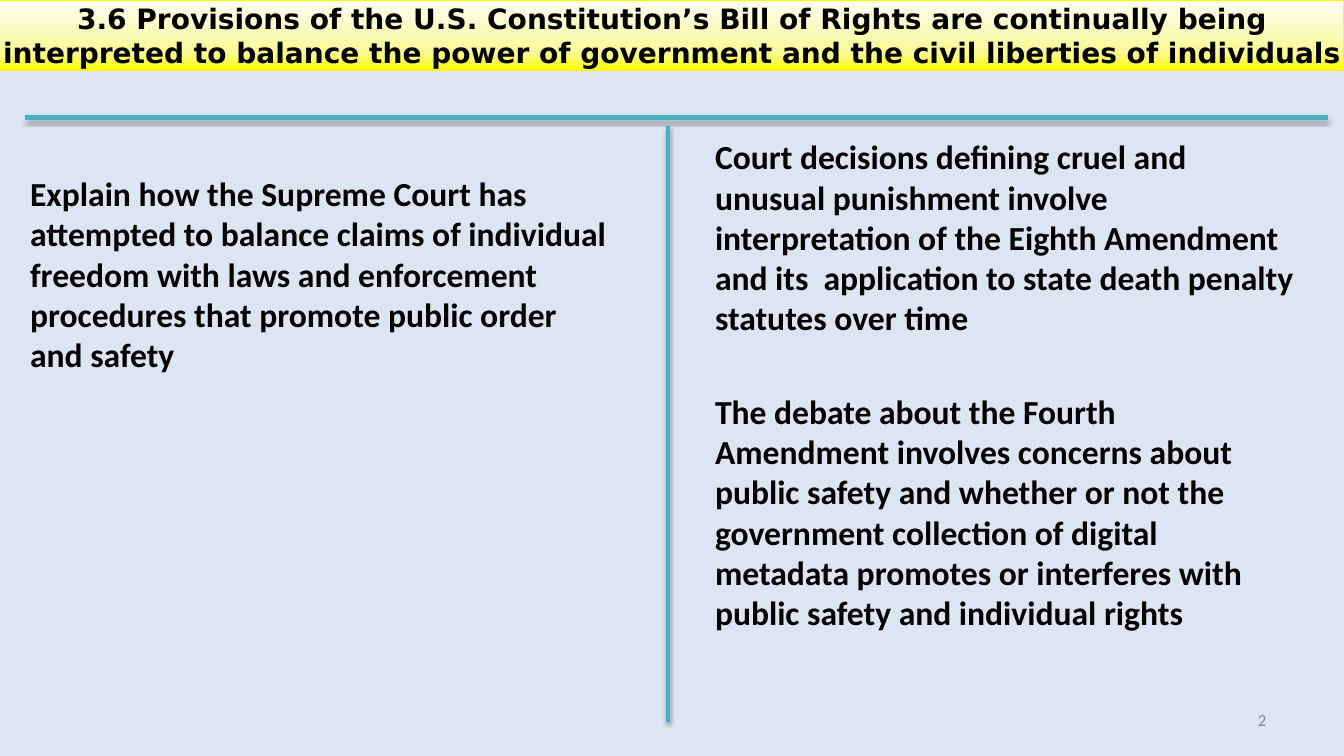
from copy import deepcopy

from lxml.etree import SubElement
from pptx import Presentation
from pptx.dml.color import RGBColor
from pptx.enum.shapes import MSO_CONNECTOR as Connector, MSO_SHAPE as Shape
from pptx.enum.text import MSO_ANCHOR as Anchor, PP_ALIGN as Align
from pptx.oxml.ns import qn
from pptx.util import Cm, Pt

PALE_BLUE = RGBColor(0xDC, 0xE6, 0xF2)
CREAM = RGBColor(0xFD, 0xFE, 0xF4)
LIGHT_YELLOW = RGBColor(0xFB, 0xF9, 0x97)
YELLOW = RGBColor(0xFF, 0xFF, 0x00)
TEAL = RGBColor(0x4B, 0xAC, 0xC6)
BLACK = RGBColor(0, 0, 0)
GREY = RGBColor(0x88, 0x88, 0x88)

BODY = {"name": "Calibri", "size": Pt(24), "bold": True}
HEADING = {"name": "DejaVu Sans", "size": Pt(20), "bold": True}
NUMBER = {"name": "Calibri", "size": Pt(12), "bold": False}
NO_INSETS = {"margin_left": 0, "margin_top": Cm(0.03), "margin_right": 0, "margin_bottom": 0}
HEADING_INSETS = {**NO_INSETS, "margin_left": Cm(0.03)}
KNOWLEDGE_INSETS = {**NO_INSETS, "margin_right": Cm(0.73)}
OBJECTIVE_INSETS = {"margin_left": Cm(0.25), "margin_top": Cm(0.13),
                    "margin_right": Cm(0.48), "margin_bottom": Cm(0.13)}


def write(holder, paragraphs, font, color, insets, align=Align.LEFT):
    """Fill a shape with (space before in points, text) paragraphs."""
    frame = holder.text_frame
    frame.word_wrap = True
    frame.vertical_anchor = Anchor.TOP
    for key, value in insets.items():
        setattr(frame, key, value)
    for index, (gap, text) in enumerate(paragraphs):
        paragraph = frame.add_paragraph() if index else frame.paragraphs[0]
        paragraph.alignment = align
        paragraph.space_before = Pt(gap)
        run = paragraph.add_run()
        run.text = text
        for key, value in font.items():
            setattr(run.font, key, value)
        run.font.color.rgb = color


# Slide and background
deck = Presentation()
deck.slide_width, deck.slide_height = Cm(33.87), Cm(19.05)
slide = deck.slides.add_slide(deck.slide_layouts[6])
slide.background.fill.solid()
slide.background.fill.fore_color.rgb = PALE_BLUE

# Heading band with a three-stop gradient
heading = slide.shapes.add_shape(Shape.RECTANGLE, 0, Cm(0.02), Cm(33.86), Cm(1.76))
heading.shadow.inherit = False
heading.line.color.rgb = YELLOW
heading.line.width = Pt(0.75)
heading.fill.gradient()
heading.fill.gradient_angle = 270
first_stop = heading._element.spPr.find(".//" + qn("a:gs"))
first_stop.addnext(deepcopy(first_stop))
stops = zip(heading.fill.gradient_stops, (0, 0.74, 1), (CREAM, LIGHT_YELLOW, YELLOW))
for stop, position, color in stops:
    stop.position = position
    stop.color.rgb = color
write(heading, [(1, "3.6 Provisions of the U.S. Constitution’s Bill of Rights are continually being "
                    "interpreted to balance the power of government and the civil liberties of "
                    "individuals")],
      HEADING, BLACK, HEADING_INSETS, Align.CENTER)

# Knowledge, slide number and objective
texts = [
    ((18.02, 3.4, 15.37, 12.62), BODY, BLACK, KNOWLEDGE_INSETS, [
        (4.3, "Court decisions defining cruel and unusual punishment involve interpretation of the "
              "Eighth Amendment and its  application to state death penalty statutes over time"),
        (37.9, "The debate about the Fourth Amendment involves concerns about public safety and "
               "whether or not the government collection of digital metadata promotes or "
               "interferes with public safety and individual rights")]),
    ((31.7, 17.86, 0.28, 0.56), NUMBER, GREY, NO_INSETS, [(1, "2")]),
    ((0.51, 4.23, 15.37, 5.38), BODY, BLACK, OBJECTIVE_INSETS, [
        (0, "Explain how the Supreme Court has attempted to balance claims of individual freedom "
            "with laws and enforcement procedures that promote public order and safety")]),
]
for place, font, color, insets, paragraphs in texts:
    box = slide.shapes.add_textbox(*map(Cm, place))
    write(box, paragraphs, font, color, insets)

# Horizontal and vertical dividers with a soft shadow
for ends in ((0.64, 2.96, 33.48, 2.96), (16.83, 18.19, 16.83, 3.18)):
    divider = slide.shapes.add_connector(Connector.STRAIGHT, *map(Cm, ends))
    divider.line.color.rgb = TEAL
    divider.line.width = Pt(3)
    effects = SubElement(divider._element.spPr, qn("a:effectLst"))
    shadow = SubElement(effects, qn("a:outerShdw"), blurRad=str(Pt(3.1)), dist=str(Pt(1.8)),
                        dir="5400000", rotWithShape="0")
    shade = SubElement(shadow, qn("a:srgbClr"), val=str(BLACK))
    SubElement(shade, qn("a:alpha"), val="35000")

deck.save("out.pptx")
